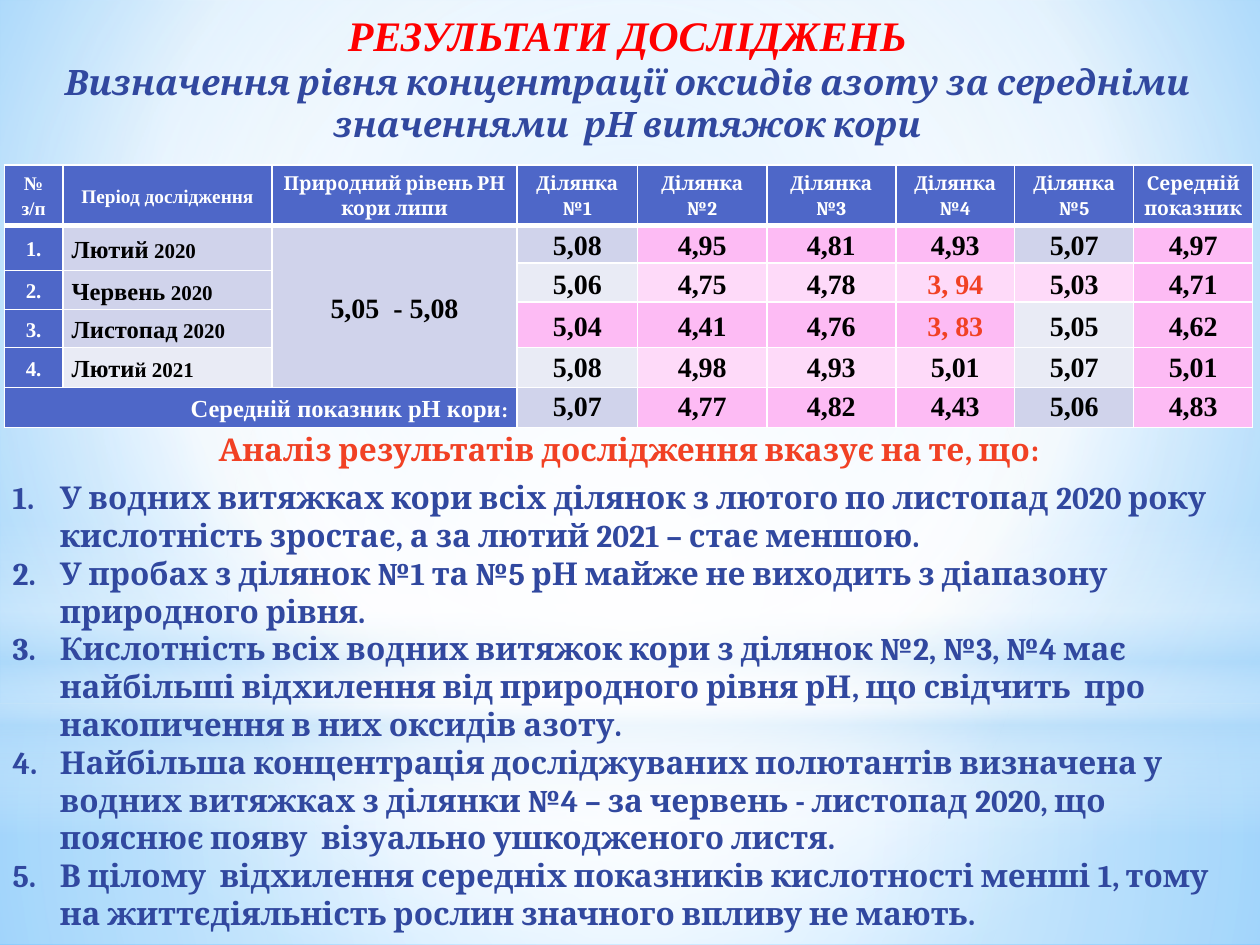
import pptx
import pptx.util
import pptx.dml.color
import pptx.enum.shapes
import pptx.enum.text
import pptx.oxml
import pptx.oxml.ns

Pt = pptx.util.Pt
RGB = pptx.dml.color.RGBColor
Align = pptx.enum.text.PP_ALIGN
Anchor = pptx.enum.text.MSO_ANCHOR
Shape = pptx.enum.shapes.MSO_SHAPE

WHITE = RGB(0xFF, 0xFF, 0xFF)
BLACK = RGB(0, 0, 0)
RED = RGB(0xFF, 0, 0)
CORAL = RGB(0xF1, 0x41, 0x24)
NAVY = RGB(0x31, 0x48, 0x9F)
BLUE = RGB(0x4E, 0x67, 0xC8)
GREY = RGB(0xD0, 0xD3, 0xEB)
PALE = RGB(0xE9, 0xEB, 0xF5)
PINK = RGB(0xFD, 0xBB, 0xF4)
ROSE = RGB(0xFE, 0xDA, 0xF9)
SKY = RGB(0xB4, 0xDC, 0xFA)
AZURE = RGB(0x9E, 0xD5, 0xFF)
DEEP = RGB(0x5B, 0xB9, 0xFF)

TIMES = "Times New Roman"
SERIF = "Cambria"

TITLE = ("РЕЗУЛЬТАТИ ДОСЛІДЖЕНЬ\n"
         "Визначення рівня концентрації оксидів азоту за середніми значеннями  рН витяжок кори")
HEADS = ["№ з/п", "Період дослідження", "Природний рівень РН кори липи",
         *[f"Ділянка №{n}" for n in range(1, 6)], "Середній показник"]
WIDTHS = [33.5, 119.5, 140, 69, 73.75, 73.75, 68, 68, 68]
HEIGHTS = [34.5, 21.5, 4.5, 17.75, 4.5, 21.75, 22.75, 22.75]
MONTHS = [
    (1, 2, "Лютий", " 2020", GREY),
    (3, 4, "Червень", " 2020", GREY),
    (5, 5, "Листопад", " 2020", GREY),
    (6, 6, "Люти", "й 2021", PALE),
]
TINTS = {"G": GREY, "L": PALE, "P": PINK, "R": ROSE}
LEVELS = [
    (1, 1, "GPPPGP", ["5,08", "4,95", "4,81", "4,93", "5,07", "4,97"]),
    (2, 3, "LRRRRP", ["5,06", "4,75", "4,78", "3, 94", "5,03", "4,71"]),
    (4, 5, "PPPPLP", ["5,04", "4,41", "4,76", "3, 83", "5,05", "4,62"]),
    (6, 6, "LRRRLP", ["5,08", "4,98", "4,93", "5,01", "5,07", "5,01"]),
    (7, 7, "GPPPGP", ["5,07", "4,77", "4,82", "4,43", "5,06", "4,83"]),
]
NOTES = [
    "Аналіз результатів дослідження вказує на те, що:",
    "У водних витяжках кори всіх ділянок з лютого по листопад 2020 року кислотність зростає, а за лютий 2021 – стає меншою.",
    "У пробах з ділянок №1 та №5 рН майже не виходить з діапазону природного рівня.",
    "Кислотність всіх водних витяжок кори з ділянок №2, №3, №4 має найбільші відхилення від природного рівня рН, що свідчить  про накопичення в них оксидів азоту.",
    "Найбільша концентрація досліджуваних полютантів визначена у водних витяжках з ділянки №4 – за червень - листопад 2020, що пояснює появу  візуально ушкодженого листя.",
    "В цілому  відхилення середніх показників кислотності менші 1, тому на життєдіяльність рослин значного впливу не мають.",
]


def make(tag, **attrs):
    node = pptx.oxml.parse_xml(f"<a:{tag} {pptx.oxml.ns.nsdecls('a')}/>")
    for key, val in attrs.items():
        node.set(key, str(val))
    return node


def blend(grad, stops, rect=None):
    for child in list(grad):
        grad.remove(child)
    group = make("gsLst")
    grad.append(group)
    for pos, tint, alpha in stops:
        stop = make("gs", pos=pos * 1000)
        color = make("srgbClr", val=tint)
        color.append(make("alpha", val=alpha * 1000))
        stop.append(color)
        group.append(stop)
    if rect:
        way = make("path", path="circle")
        way.append(make("fillToRect", **{k: v * 1000 for k, v in zip("ltrb", rect)}))
    else:
        way = make("lin", ang=90 * 60000, scaled=0)
    grad.append(way)


def style(run, size, color, face=TIMES, slant=False):
    font = run.font
    font.size, font.name, font.bold, font.italic = Pt(size), face, True, slant
    font.color.rgb = color


def add_back(slide):
    slide.background.fill.gradient()
    blend(slide.element.xpath(".//p:bgPr/a:gradFill")[0],
          [(0, AZURE, 100), (60, WHITE, 100), (100, DEEP, 100)], (20, 10, 20, 60))
    mid = (50, 50, 50, 50)
    layers = [
        (Shape.RECTANGLE, 402, 138, [(0, WHITE, 91), (37, WHITE, 76), (100, SKY, 79)], mid),
        (Shape.RECTANGLE, 0, 402, [(0, WHITE, 89), (48, WHITE, 62), (100, SKY, 79)], mid),
        (Shape.RECTANGLE, 297, 180, [(0, WHITE, 0), (29, WHITE, 30), (45, SKY, 40),
                                     (55, WHITE, 26), (65, SKY, 60), (100, WHITE, 0)], None),
        (Shape.OVAL, 126, 402, [(0, WHITE, 100), (56, WHITE, 0)], mid),
    ]
    for at, (kind, top, high, stops, rect) in enumerate(layers, 2):
        shape = slide.shapes.add_shape(kind, 0, Pt(top), Pt(720), Pt(high))
        shape.shadow.inherit = False
        shape.line.fill.background()
        shape.fill.gradient()
        blend(shape.element.xpath("./p:spPr/a:gradFill")[0], stops, rect)
        slide.shapes.element.insert(at, shape.element)


def place(shape, box, text):
    shape.left, shape.top, shape.width, shape.height = map(Pt, box)
    frame = shape.text_frame
    frame.text = text
    frame.word_wrap = True
    frame.auto_size = pptx.enum.text.MSO_AUTO_SIZE.NONE
    frame.vertical_anchor = Anchor.TOP
    return frame.paragraphs


def add_title(slide, box):
    first, second = place(slide.shapes.title, box, TITLE)
    first.alignment = second.alignment = Align.CENTER
    style(first.runs[0], 24, RED, slant=True)
    style(second.runs[0], 20, NAVY, SERIF, True)


def edge(cell, low):
    props = cell._tc.get_or_add_tcPr()
    for at, side in enumerate("LRTB"):
        line = make(f"ln{side}", w=Pt(low if side == "B" else 1))
        fill = make("solidFill")
        fill.append(make("srgbClr", val=WHITE))
        line.append(fill)
        props.insert(at, line)


def fill_cell(cell, text, size, color, tint, align=Align.CENTER, face=TIMES,
              tail="", space=1.15):
    cell.fill.solid()
    cell.fill.fore_color.rgb = tint
    para = cell.text_frame.paragraphs[0]
    para.text = text
    para.alignment = align
    para.line_spacing = space
    style(para.runs[0], size, color, face)
    if tail:
        run = para.add_run()
        run.text = tail
        style(run, 12, color, face)


def add_grid(slide, box):
    table = slide.shapes.add_table(len(HEIGHTS), len(WIDTHS), *map(Pt, box)).table
    table.first_row = table.horz_banding = False
    for col, wide in zip(table.columns, WIDTHS):
        col.width = Pt(wide)
    for row, high in zip(table.rows, HEIGHTS):
        row.height = Pt(high)
    for r, row in enumerate(table.rows):
        for cell in row.cells:
            cell.margin_left = cell.margin_right = Pt(5)
            cell.margin_top = cell.margin_bottom = 0
            cell.vertical_anchor = Anchor.MIDDLE
            edge(cell, 1 if r else 3)

    def span(top, left, low, right):
        cell = table.cell(top, left)
        if (top, left) != (low, right):
            cell.merge(table.cell(low, right))
        return cell

    for c, head in enumerate(HEADS):
        fill_cell(table.cell(0, c), head, 11, WHITE, BLUE, face=TIMES if c < 2 else SERIF)
    for n, (top, low, month, year, tint) in enumerate(MONTHS, 1):
        fill_cell(span(top, 0, low, 0), f"{n}.", 12, WHITE, BLUE)
        fill_cell(span(top, 1, low, 1), month, 14, BLACK, tint, Align.LEFT, tail=year)
    fill_cell(span(1, 2, 6, 2), "5,05  - 5,08", 16, BLACK, GREY)
    fill_cell(span(7, 0, 7, 2), "Середній показник рН кори", 14, WHITE, BLUE,
              Align.RIGHT, tail=":")
    for top, low, tints, values in LEVELS:
        for c, (code, value) in enumerate(zip(tints, values), 3):
            color = CORAL if value.startswith("3") else BLACK
            fill_cell(span(top, c, low, c), value, 16, color, TINTS[code],
                      space=1.15 if top < 6 else 1)


def add_notes(slide, box):
    paras = place(slide.placeholders[1], box, "\n".join(NOTES))
    for n, para in enumerate(paras):
        props = para._p.get_or_add_pPr()
        props.set("marL", str(Pt(27 if n else 0)))
        props.set("indent", str(Pt(-27 if n else 0)))
        props.append(make("buAutoNum", type="arabicPeriod") if n else make("buNone"))
        para.alignment = Align.LEFT if n else Align.CENTER
        para.space_before = Pt(6 if n == 1 else 0)
        style(para.runs[0], 18, NAVY if n else CORAL, SERIF)


def main():
    deck = pptx.Presentation()
    deck.slide_width, deck.slide_height = Pt(720), Pt(540)
    slide = deck.slides.add_slide(deck.slide_layouts[1])
    add_back(slide)
    add_title(slide, (-1.5, 2, 720, 108))
    add_grid(slide, (2.5, 94.25, sum(WIDTHS), sum(HEIGHTS)))
    add_notes(slide, (0, 242, 719, 298))
    deck.save("out.pptx")


if __name__ == "__main__":
    main()
